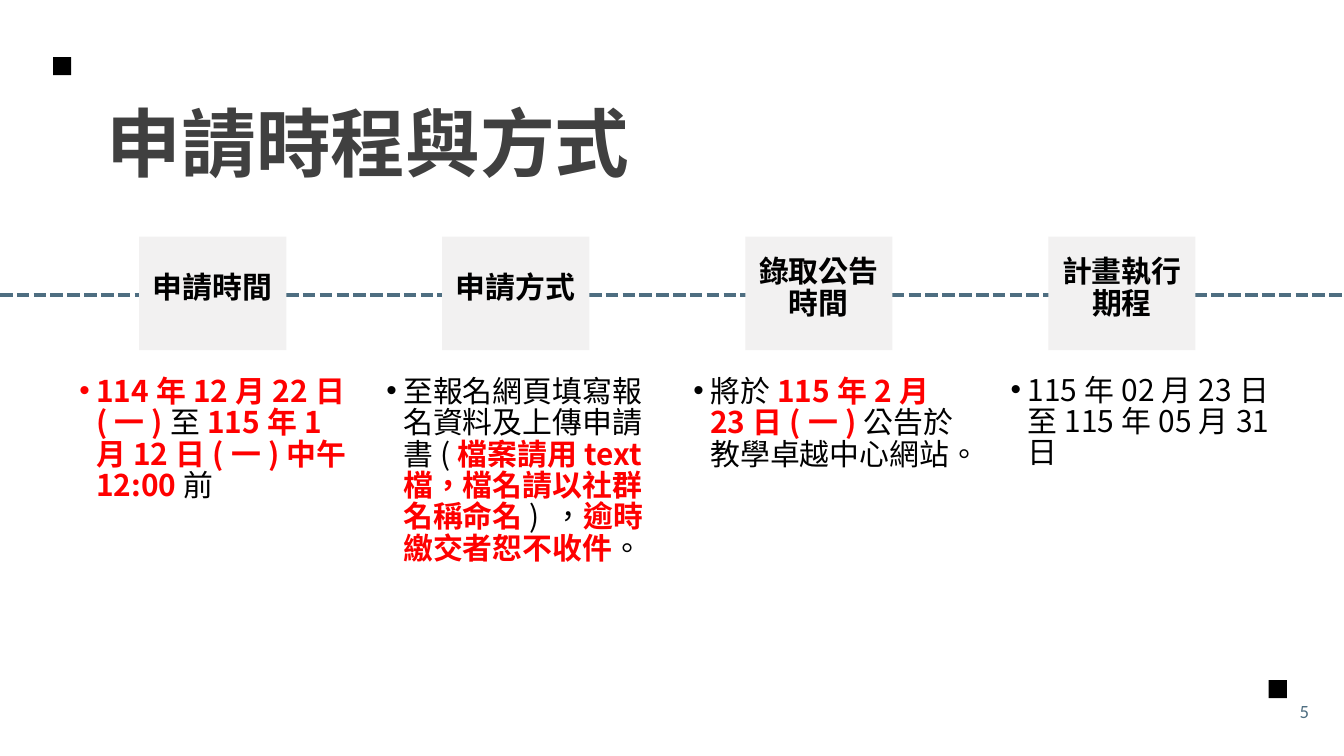
from dataclasses import dataclass, field
from typing import NamedTuple

from lxml import etree
from pptx import Presentation, util as u
from pptx.dml.color import RGBColor
from pptx.enum import dml, lang, shapes, text
from pptx.oxml.ns import qn


@dataclass(frozen=True)
class Theme:
    font: str = "Noto Sans CJK SC"
    number_font: str = "Calibri"
    ink: str = "000000"
    alert: str = "FF0000"
    heading: str = "404040"
    accent: str = "4E6E81"
    card: str = "F2F1F1"
    title_size: float = 80
    body_size: float = 32
    number_size: float = 20


THEME = Theme()


class Box(NamedTuple):
    left: float
    top: float
    width: float
    height: float

    def emu(self) -> list[int]:
        return [u.Inches(value) for value in self]


class Grid(NamedTuple):
    """One row of equal cells: the first cell and the step to the next."""
    first: Box
    pitch: float

    def cell(self, column: int) -> Box:
        return self.first._replace(left=self.first.left + column * self.pitch)


class Run(NamedTuple):
    words: str
    color: str
    bold: bool = False


@dataclass(frozen=True)
class Style:
    size: float
    spacing: float | None = None
    font: str = THEME.font
    inset: float = 0
    bullet: bool = False
    frame: dict = field(default_factory=dict)
    paragraph: dict = field(default_factory=dict)


@dataclass(frozen=True)
class Stage:
    label: str
    details: list[Run]
    height: float
    shift: tuple[float, float] = (0, 0)


WIDTH, HEIGHT = 20, 11.25
CARDS = Grid(Box(2.07, 3.52, 2.19, 1.69), 4.51)
LABELS = Grid(Box(2.07, 3.38, 2.19, 1.83), 4.51)
DETAILS = Grid(Box(0.93, 5.61, 4.23, 1.43), 4.57)

MIDDLE = {"vertical_anchor": text.MSO_ANCHOR.MIDDLE}
GROW = {"auto_size": text.MSO_AUTO_SIZE.SHAPE_TO_FIT_TEXT}
TITLE = Style(THEME.title_size, 84, frame=GROW)
LABEL = Style(THEME.body_size, 34.5, inset=0.06, frame=MIDDLE,
              paragraph={"alignment": text.PP_ALIGN.CENTER})
DETAIL = Style(THEME.body_size, 33.6, bullet=True, frame=GROW,
               paragraph={"level": 1})
NUMBER = Style(THEME.number_size, font=THEME.number_font, inset=0.1,
               frame=MIDDLE, paragraph={"alignment": text.PP_ALIGN.RIGHT})


def plain(words: str) -> Run:
    return Run(words, THEME.ink)


def alert(words: str) -> Run:
    return Run(words, THEME.alert, True)


STAGES = [
    Stage("申請時間", [alert("114年12月22日(一)"), plain("至"),
                   alert("115年1月12日(一)中午12:00"), plain("前")], 1.43),
    Stage("申請方式", [plain("至報名網頁填寫報名資料及上傳申請書("),
                   alert("檔案請用text檔，檔名請以社群名稱命名"), plain(") ，"),
                   alert("逾時繳交者恕不收件"), plain("。")], 2.86),
    Stage("錄取公告時間", [plain("將於"), alert("115年2月23日(一)"),
                     plain("公告於教學卓越中心網站。")], 1.43),
    Stage("計畫執行期程", [plain("115年02月23日至115年05月31日")], 0.95, (0.15, -0.02)),
]


def apply(target, values: dict) -> None:
    for name, value in values.items():
        setattr(target, name, value)


def add_block(slide, box: Box, color: str) -> None:
    block = slide.shapes.add_shape(shapes.MSO_SHAPE.RECTANGLE, *box.emu())
    block.shadow.inherit = False
    block.fill.solid()
    block.fill.fore_color.rgb = RGBColor.from_string(color)
    block.line.fill.background()


def add_text(slide, box: Box, runs: list[Run], style: Style) -> None:
    frame = slide.shapes.add_textbox(*box.emu()).text_frame
    inset = u.Inches(style.inset)
    sides = ("left", "top", "right", "bottom")
    apply(frame, {f"margin_{side}": inset for side in sides})
    apply(frame, {"word_wrap": True, **style.frame})
    paragraph = frame.paragraphs[0]
    apply(paragraph, style.paragraph)
    if style.spacing:
        paragraph.line_spacing = u.Pt(style.spacing)
    if style.bullet:
        properties = paragraph._p.get_or_add_pPr()
        properties.set("marL", str(u.Inches(0.5)))
        properties.set("indent", str(u.Inches(-0.25)))
        etree.SubElement(properties, qn("a:buFont")).set("typeface", "Arial")
        etree.SubElement(properties, qn("a:buChar")).set("char", "•")
    for words, color, bold in runs:
        run = paragraph.add_run()
        run.text = words
        apply(run.font, {"name": style.font, "size": u.Pt(style.size), "bold": bold,
                         "language_id": lang.MSO_LANGUAGE_ID.TRADITIONAL_CHINESE})
        run.font.color.rgb = RGBColor.from_string(color)
        east_asian = etree.SubElement(run.font._element, qn("a:ea"))
        east_asian.set("typeface", style.font)


def add_timeline(slide, top: float) -> None:
    timeline = slide.shapes.add_connector(
        shapes.MSO_CONNECTOR.STRAIGHT, 0, u.Inches(top), u.Inches(WIDTH), u.Inches(top))
    timeline.line.color.rgb = RGBColor.from_string(THEME.accent)
    apply(timeline.line, {"width": u.Pt(4.5), "dash_style": dml.MSO_LINE.SQUARE_DOT})
    etree.SubElement(timeline._element.spPr, qn("a:effectLst"))


def main() -> None:
    deck = Presentation()
    apply(deck, {"slide_width": u.Inches(WIDTH), "slide_height": u.Inches(HEIGHT)})
    slide = deck.slides.add_slide(deck.slide_layouts[6])

    # Timeline with one card and one detail text per stage
    add_timeline(slide, 4.39)
    for column, stage in enumerate(STAGES):
        add_block(slide, CARDS.cell(column), THEME.card)
        add_text(slide, LABELS.cell(column), [Run(stage.label, THEME.ink, True)], LABEL)
        cell = DETAILS.cell(column)
        right, down = stage.shift
        add_text(slide, Box(cell.left + right, cell.top + down, cell.width, stage.height),
                 stage.details, DETAIL)

    # Title
    add_text(slide, Box(1.59, 1.61, 17.36, 1.18),
             [Run("申請時程與方式", THEME.heading, True)], TITLE)

    # Corner squares and page number
    for left, top in ((18.88, 10.12), (0.79, 0.85)):
        add_block(slide, Box(left, top, 0.27, 0.27), THEME.ink)
    add_text(slide, Box(17.25, 10.38, 2.33, 0.4), [Run("5", THEME.accent)], NUMBER)

    deck.save("out.pptx")


if __name__ == "__main__":
    main()
